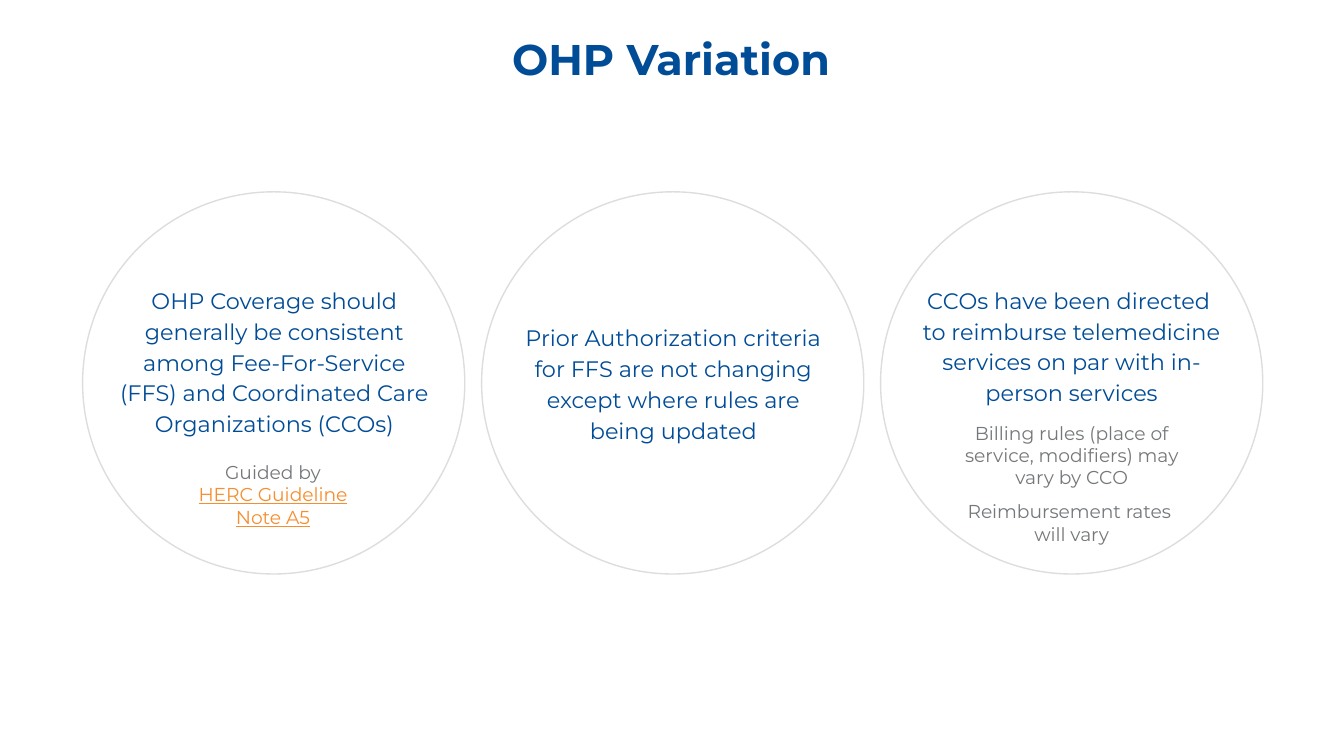
from pptx import Presentation
from pptx import util as u
from pptx.dml.color import RGBColor
from pptx.enum import shapes, text

PX = 9525
FONT = "Montserrat"
WHITE = RGBColor(0xFF, 0xFF, 0xFF)
BLUE = RGBColor(0x00, 0x4C, 0x97)
GRAY = RGBColor(0x75, 0x78, 0x7B)
ORANGE = RGBColor(0xF6, 0x8D, 0x2E)
OUTLINE = RGBColor(0xDD, 0xDD, 0xDD)

CIRCLE_LEFT, CIRCLE_TOP, CIRCLE_SIZE, CIRCLE_PITCH = 59, 137, 273, 285

TOPICS = [
    {
        "heading": ((25, 65, 224, 150),
                    "OHP Coverage should generally be consistent among "
                    "Fee-For-Service (FFS) and Coordinated Care Organizations (CCOs)"),
        "notes": ((66, 192, 140, 77),
                  [[("Guided by\n", GRAY), ("HERC Guideline Note A5", ORANGE)]]),
    },
    {
        "heading": ((25, 92, 224, 88),
                    "Prior Authorization criteria for FFS are not changing "
                    "except where rules are being updated"),
    },
    {
        "heading": ((20, 65, 233, 88),
                    "CCOs have been directed \nto reimburse telemedicine "
                    "services on par with in-person services"),
        "notes": ((51, 164, 171, 77),
                  [[("Billing rules (place of service, modifiers) may vary by CCO", GRAY)],
                   [("Reimbursement rates \nwill vary", GRAY)]]),
    },
]


def emu(*lengths):
    return [u.Emu(length * PX) for length in lengths]


def add_span(para, words, size, color, bold=False):
    for number, line in enumerate(words.split("\n")):
        if number:
            para.add_line_break()
        if not line:
            continue
        span = para.add_run()
        span.text = line
        span.font.name = FONT
        span.font.size = u.Pt(size)
        span.font.bold = bold
        span.font.color.rgb = color
        span.font.underline = color == ORANGE


def set_frame(frame, inset):
    frame.word_wrap = True
    frame.auto_size = text.MSO_AUTO_SIZE.NONE
    frame.margin_left = frame.margin_right = u.Emu(inset * PX)
    frame.margin_top = frame.margin_bottom = u.Emu(inset * PX)


def add_text(page, area, paragraphs, size, spacing):
    frame = page.shapes.add_textbox(*emu(*area)).text_frame
    set_frame(frame, 0)
    for number, spans in enumerate(paragraphs):
        para = frame.add_paragraph() if number else frame.paragraphs[0]
        para.alignment = text.PP_ALIGN.CENTER
        para.line_spacing = spacing
        if number:
            para.space_before = u.Pt(6)
        for words, color in spans:
            add_span(para, words, size, color)


def add_title(page, area, words):
    box = page.shapes.title
    box.left, box.top, box.width, box.height = emu(*area)
    frame = box.text_frame
    set_frame(frame, 4)
    frame.vertical_anchor = text.MSO_ANCHOR.MIDDLE
    para = frame.paragraphs[0]
    para.alignment = text.PP_ALIGN.CENTER
    para.line_spacing = 0.9
    add_span(para, words, 23, BLUE, bold=True)


def add_topic(page, area, topic):
    left, top = area[:2]
    circle = page.shapes.add_shape(shapes.MSO_SHAPE.OVAL, *emu(*area))
    circle.shadow.inherit = False
    circle.fill.solid()
    circle.fill.fore_color.rgb = WHITE
    circle.line.color.rgb = OUTLINE
    circle.line.width = u.Pt(0.75)

    (x, y, width, height), words = topic["heading"]
    add_text(page, (left + x, top + y, width, height), [[(words, BLUE)]], 12, 1.15)
    if "notes" in topic:
        (x, y, width, height), paragraphs = topic["notes"]
        add_text(page, (left + x, top + y, width, height), paragraphs, 10, 1.0)


def main():
    deck = Presentation()
    deck.slide_width, deck.slide_height = emu(960, 540)
    page = deck.slides.add_slide(deck.slide_layouts[5])
    add_title(page, (1, 0, 957, 88), "OHP Variation")
    for number, topic in enumerate(TOPICS):
        left = CIRCLE_LEFT + number * CIRCLE_PITCH
        add_topic(page, (left, CIRCLE_TOP, CIRCLE_SIZE, CIRCLE_SIZE), topic)
    deck.save("out.pptx")


if __name__ == "__main__":
    main()
